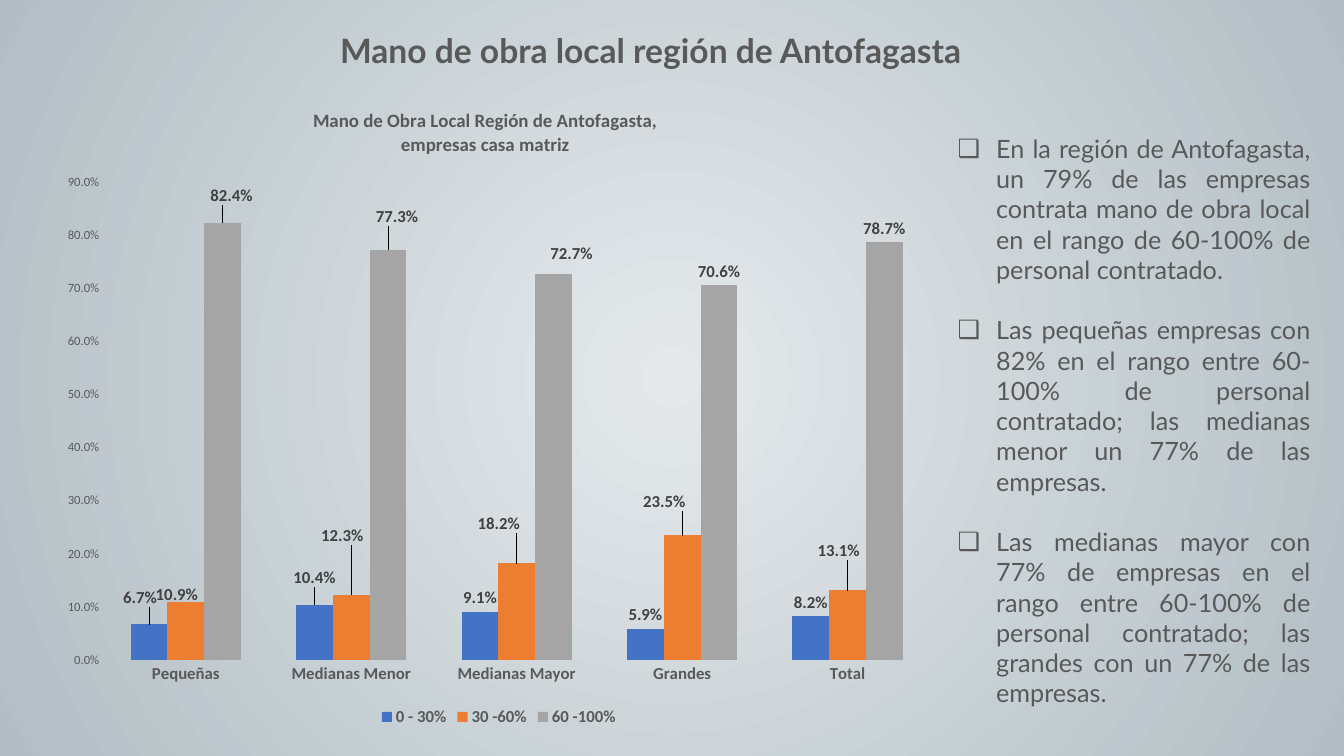
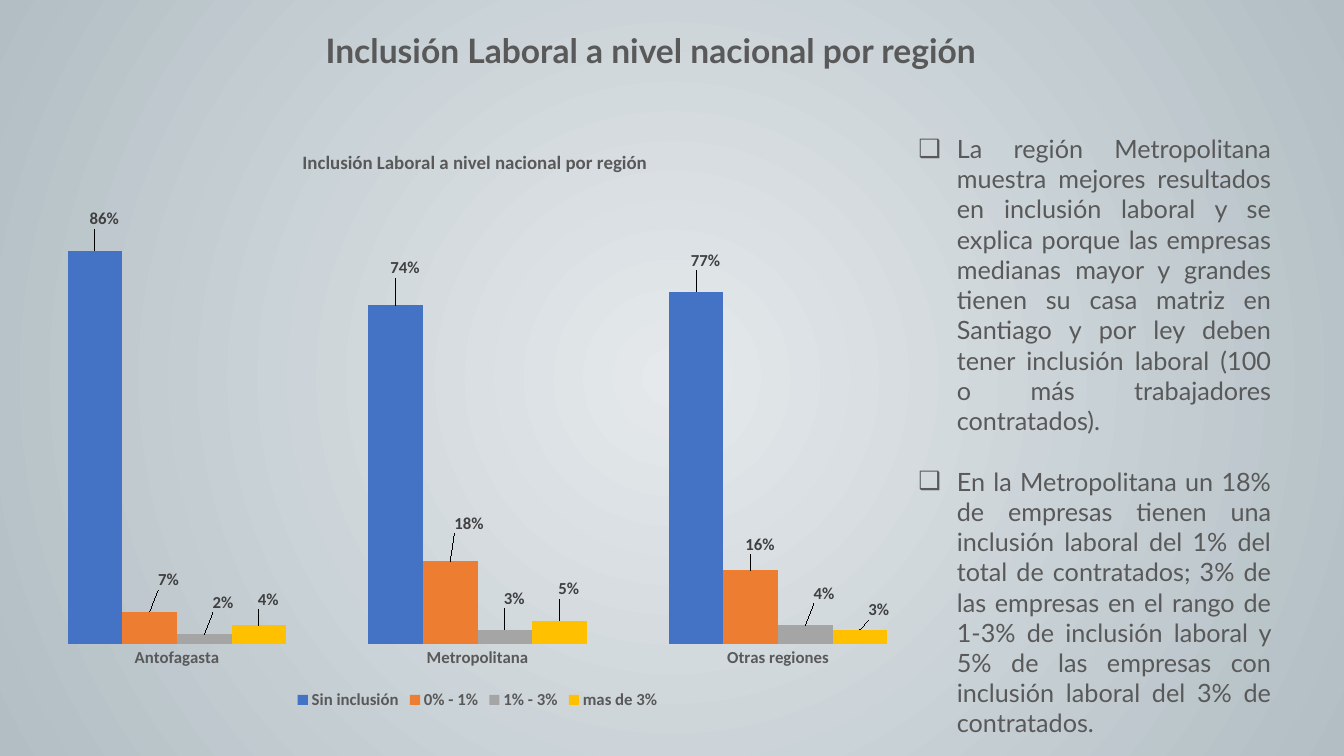
from lxml.etree import SubElement
from pptx import Presentation
from pptx.chart.data import CategoryChartData
from pptx.dml.color import RGBColor
from pptx.enum.chart import XL_CHART_TYPE as CHART, XL_LABEL_POSITION as LABEL
from pptx.enum.chart import XL_LEGEND_POSITION as LEGEND, XL_TICK_MARK as TICK
from pptx.enum.text import MSO_ANCHOR, MSO_AUTO_SIZE, PP_ALIGN
from pptx.oxml import parse_xml
from pptx.oxml.ns import nsdecls, qn
from pptx.util import Cm, Pt

GREY = RGBColor(0x59, 0x59, 0x59)
LABEL_GREY = RGBColor(0x40, 0x40, 0x40)
BG_CENTER = RGBColor(0xE5, 0xE9, 0xEC)
BG_EDGE = RGBColor(0xB2, 0xBE, 0xC4)
SERIES_COLORS = [RGBColor(0x44, 0x72, 0xC4), RGBColor(0xED, 0x7D, 0x31),
                 RGBColor(0xA5, 0xA5, 0xA5), RGBColor(0xFF, 0xC0, 0x00)]
TEXT_FONT, CHART_FONT = "Lato", "Calibri"
TITLE_BOX = (1.65, 0.63, 29.5, 1.27)
HANGING = Cm(0.97)
LINE = Pt(21.6)

# Nudges move single data labels: category index -> (dx, dy) as shares of the chart
LOCAL_LABOUR = {
    "title": "Mano de obra local región de Antofagasta",
    "list_box": (23.88, 3.23, 9.4, 14.1),
    "items": [
        "En la región de Antofagasta, un 79% de las empresas contrata mano de obra "
        "local en el rango de 60-100% de personal contratado.",
        "Las pequeñas empresas con 82% en el rango entre 60-100% de personal "
        "contratado; las medianas menor un 77% de las empresas.",
        "Las medianas mayor con 77% de empresas en el rango entre 60-100% de "
        "personal contratado; las grandes con un 77% de las empresas.",
    ],
    "chart_box": (1.24, 2.16, 22.66, 16.26),
    "chart_title": ["Mano de Obra Local Región de Antofagasta,", "empresas casa matriz"],
    "title_at": (0.29, 0.03),
    "plot_area": (0.06, 0.15, 0.92, 0.74),
    "number_format": "0.0%",
    "axis_max": 0.9,
    "axis_visible": True,
    "categories": ["Pequeñas", "Medianas Menor", "Medianas Mayor", "Grandes", "Total"],
    "series": [
        ("0 - 30%", [0.067, 0.104, 0.091, 0.059, 0.082],
         {0: (-0.01, -0.02), 1: (0, -0.02)}),
        ("30 -60%", [0.109, 0.123, 0.182, 0.235, 0.131],
         {0: (-0.01, 0.01), 1: (-0.01, -0.07), 2: (-0.02, -0.04),
          3: (-0.02, -0.03), 4: (-0.01, -0.04)}),
        ("60 -100%", [0.824, 0.773, 0.727, 0.706, 0.787],
         {0: (0.01, -0.02), 1: (0.01, -0.03), 2: (0.02, -0.01)}),
    ],
}
INCLUSION = {
    "title": "Inclusión Laboral a nivel nacional por región",
    "list_box": (22.89, 3.23, 9.4, 14.1),
    "items": [
        "La región Metropolitana muestra mejores resultados en inclusión laboral y se "
        "explica porque las empresas medianas mayor y grandes tienen su casa matriz en "
        "Santiago y por ley deben tener inclusión laboral (100 o más trabajadores "
        "contratados).",
        "En la Metropolitana un 18% de empresas tienen una inclusión laboral del 1% del "
        "total de contratados; 3% de las empresas en el rango de 1-3% de inclusión "
        "laboral y 5% de las empresas con inclusión laboral del 3% de contratados.",
    ],
    "chart_box": (0.2, 3.23, 23.67, 14.76),
    "chart_title": ["Inclusión Laboral a nivel nacional por región"],
    "title_at": (0.31, 0.03),
    "plot_area": (0.02, 0.1, 0.96, 0.78),
    "number_format": "0%",
    "axis_max": 1,
    "axis_visible": False,
    "categories": ["Antofagasta", "Metropolitana", "Otras regiones"],
    "series": [
        ("Sin inclusión", [0.86, 0.74, 0.77],
         {0: (0.01, -0.03), 1: (0.01, -0.04), 2: (0.01, -0.03)}),
        ("0% - 1%", [0.07, 0.18, 0.16],
         {0: (0.02, -0.03), 1: (0.02, -0.04), 2: (0.01, -0.02)}),
        ("1% - 3%", [0.02, 0.03, 0.04],
         {0: (0.02, -0.03), 1: (0.01, -0.03), 2: (0.02, -0.03)}),
        ("mas de 3%", [0.04, 0.05, 0.03],
         {0: (0.01, -0.02), 1: (0.01, -0.03), 2: (0.02, -0.01)}),
    ],
}


def set_background(master):
    fill = master.background.fill
    fill.gradient()
    for stop, color in zip(fill.gradient_stops, (BG_CENTER, BG_EDGE)):
        stop.color.rgb = color
    grad = master._element.find(".//" + qn("a:gradFill"))
    grad.replace(grad.find(qn("a:lin")), parse_xml(
        f'<a:path {nsdecls("a")} path="circle">'
        '<a:fillToRect l="50000" t="50000" r="50000" b="50000"/></a:path>'))


def set_font(font, size, color=GREY, bold=False, name=CHART_FONT):
    font.name = name
    font.size = Pt(size)
    font.bold = bold
    font.color.rgb = color


def place(sp, box):
    sp.left, sp.top, sp.width, sp.height = (Cm(v) for v in box)
    tf = sp.text_frame
    tf.word_wrap = True
    tf.auto_size = MSO_AUTO_SIZE.NONE
    return tf


def add_title(slide, text):
    tf = place(slide.shapes.title, TITLE_BOX)
    tf.vertical_anchor = MSO_ANCHOR.MIDDLE
    p = tf.paragraphs[0]
    p.alignment = PP_ALIGN.CENTER
    r = p.add_run()
    r.text = text
    set_font(r.font, 24, bold=True, name=TEXT_FONT)


def add_list(slide, box, items):
    tf = place(slide.placeholders[1], box)
    tf.vertical_anchor = MSO_ANCHOR.TOP
    for i, item in enumerate(items):
        p = tf.add_paragraph() if i else tf.paragraphs[0]
        p.alignment = PP_ALIGN.JUSTIFY
        p.space_before = LINE if i else Pt(0)
        pPr = p._p.get_or_add_pPr()
        pPr.set("marL", str(HANGING))
        pPr.set("indent", str(-HANGING))
        SubElement(pPr, qn("a:buChar"), char="❑")
        r = p.add_run()
        r.text = item
        set_font(r.font, 18, name=TEXT_FONT)


def set_layout(parent, index, edge=False, inner=False, **shares):
    """Give a chart part a manual layout, as shares of the chart's size."""
    for old in parent.findall(qn("c:layout")):
        parent.remove(old)
    settings = {"layoutTarget": "inner"} if inner else {}
    if edge:
        settings.update(xMode="edge", yMode="edge")
    settings.update(shares)
    tags = "".join(f'<c:{tag} val="{val}"/>' for tag, val in settings.items())
    parent.insert(index, parse_xml(
        f'<c:layout {nsdecls("c")}><c:manualLayout>{tags}</c:manualLayout></c:layout>'))


def format_title(chart, lines, at):
    tf = chart.chart_title.text_frame
    for i, line in enumerate(lines):
        p = tf.add_paragraph() if i else tf.paragraphs[0]
        p.alignment = PP_ALIGN.CENTER
        r = p.add_run()
        r.text = line
        set_font(r.font, 13.5, bold=True)
    set_layout(chart.chart_title._element, 1, edge=True, x=at[0], y=at[1])


def format_axes(chart, content):
    cat, val = chart.category_axis, chart.value_axis
    for axis in (cat, val):
        axis.major_tick_mark = axis.minor_tick_mark = TICK.NONE
        axis.has_major_gridlines = False
        axis.format.line.fill.background()
    set_font(cat.tick_labels.font, 12, bold=True)
    set_font(val.tick_labels.font, 9)
    val.tick_labels.number_format = content["number_format"]
    val.tick_labels.number_format_is_linked = False
    val.minimum_scale, val.maximum_scale = 0, content["axis_max"]
    val.major_unit = 0.1
    val.visible = content["axis_visible"]


def format_series(series, color, nudges, number_format):
    series.format.fill.solid()
    series.format.fill.fore_color.rgb = color
    labels = series.data_labels
    labels.show_value = True
    labels.position = LABEL.OUTSIDE_END
    labels.number_format = number_format
    labels.number_format_is_linked = False
    set_font(labels.font, 12, LABEL_GREY, bold=True)
    for i in nudges:
        label = series.points[i].data_label
        set_font(label.font, 12, LABEL_GREY, bold=True)
        label.position = LABEL.OUTSIDE_END
    for dLbl, (dx, dy) in zip(labels._element.findall(qn("c:dLbl")), nudges.values()):
        set_layout(dLbl, 1, x=dx, y=dy)


def add_column_chart(slide, box, content):
    data = CategoryChartData(number_format=content["number_format"])
    data.categories = content["categories"]
    for name, values, _ in content["series"]:
        data.add_series(name, values)
    chart = slide.shapes.add_chart(
        CHART.COLUMN_CLUSTERED, *(Cm(v) for v in box), data).chart
    chart.font.name = CHART_FONT
    chart.font.size = Pt(10)
    format_title(chart, content["chart_title"], content["title_at"])
    format_axes(chart, content)
    chart.has_legend = True
    chart.legend.position = LEGEND.BOTTOM
    chart.legend.include_in_layout = False
    set_font(chart.legend.font, 12, bold=True)
    plot = chart.plots[0]
    plot.gap_width = 150
    plot.overlap = 0
    plot.vary_by_categories = False
    for series, color, (_, _, nudges) in zip(plot.series, SERIES_COLORS, content["series"]):
        format_series(series, color, nudges, content["number_format"])
    x, y, w, h = content["plot_area"]
    plot_area = chart._chartSpace.find(".//" + qn("c:plotArea"))
    set_layout(plot_area, 0, edge=True, inner=True, x=x, y=y, w=w, h=h)


def add_chart_slide(prs, content):
    slide = prs.slides.add_slide(prs.slide_layouts[1])
    add_title(slide, content["title"])
    add_list(slide, content["list_box"], content["items"])
    add_column_chart(slide, content["chart_box"], content)


def main():
    prs = Presentation()
    prs.slide_width, prs.slide_height = Cm(33.87), Cm(19.05)
    set_background(prs.slide_master)
    for content in (LOCAL_LABOUR, INCLUSION):
        add_chart_slide(prs, content)
    prs.save("out.pptx")


if __name__ == "__main__":
    main()
